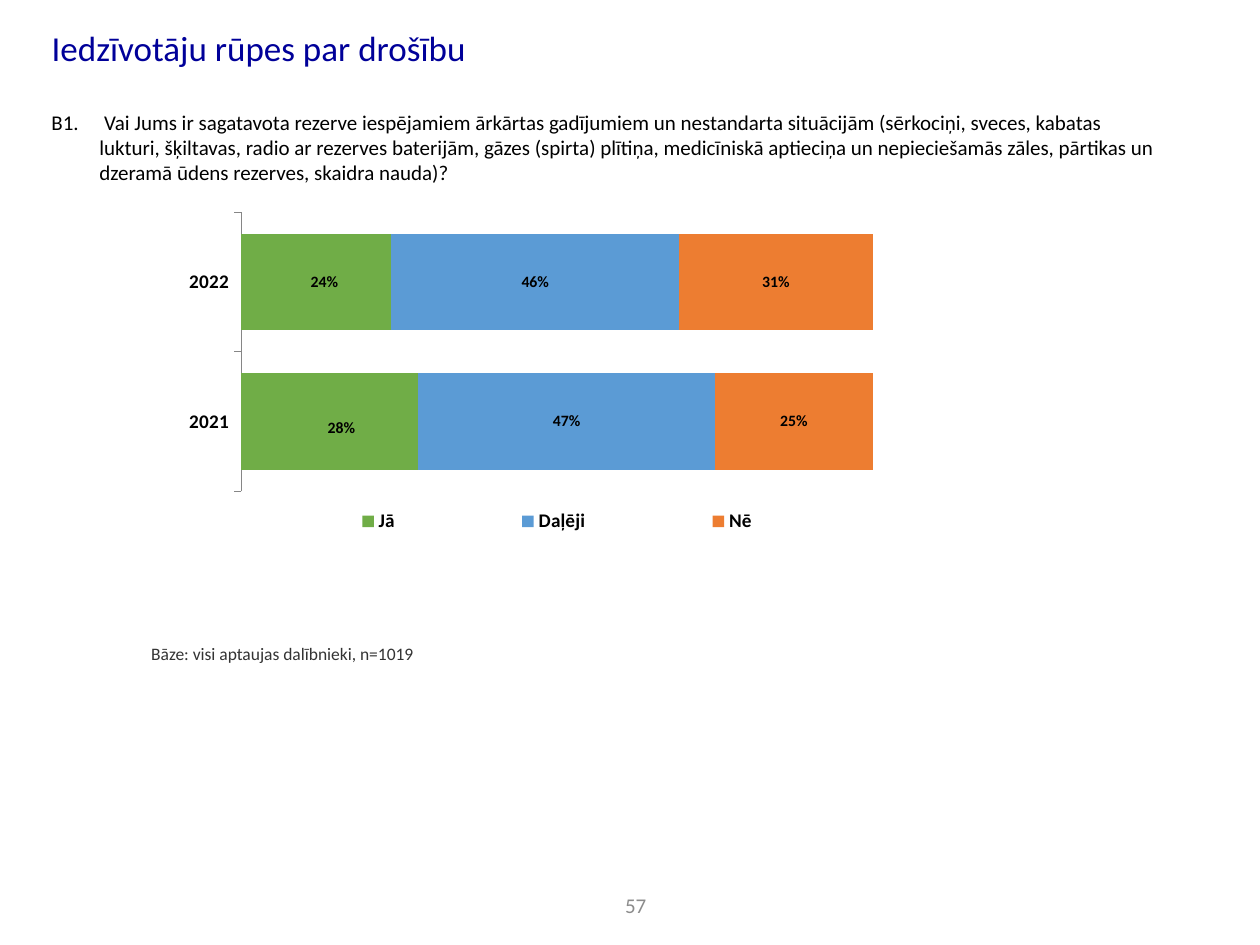
from lxml import etree
from pptx import Presentation
from pptx import util as u
from pptx.chart.data import CategoryChartData
from pptx.dml.color import RGBColor
from pptx.enum import chart as ch, text as tx
from pptx.oxml.ns import qn

HUES = {
    "title": "000099", "text": "000000", "note": "333333", "page": "8C8C8C",
    "axis": "868686", "yes": "70AD47", "part": "5B9BD5", "no": "ED7D31",
}
COLS, ROWS = 100, 75


def place(node, spot, **parts):
    for old in node.findall(qn("c:layout")):
        node.remove(old)
    layout = etree.Element(qn("c:layout"))
    manual = etree.SubElement(layout, qn("c:manualLayout"))
    for tag, val in parts.items():
        etree.SubElement(manual, qn("c:" + tag)).set("val", str(val))
    node.insert(spot, layout)


class Deck:
    font = "Calibri"

    def __init__(self):
        self.prs = Presentation()
        self.prs.slide_width, self.prs.slide_height = u.Inches(10), u.Inches(7.5)
        self.slide = self.prs.slides.add_slide(self.prs.slide_layouts[5])

    def grid(self, col, row, wide, high):
        dx, dy = self.prs.slide_width / COLS, self.prs.slide_height / ROWS
        return [u.Emu(round(n)) for n in (col * dx, row * dy, wide * dx, high * dy)]

    def style(self, font, size, hue, bold=False):
        font.name, font.size, font.bold = self.font, u.Pt(size), bold
        font.color.rgb = RGBColor.from_string(HUES[hue])

    def fill(self, shape, words, size, hue, align="LEFT", anchor="TOP"):
        frame = shape.text_frame
        frame.text = words
        frame.word_wrap = True
        frame.auto_size = tx.MSO_AUTO_SIZE.NONE
        frame.vertical_anchor = tx.MSO_ANCHOR[anchor]
        para = frame.paragraphs[0]
        para.alignment = tx.PP_ALIGN[align]
        for run in para.runs:
            self.style(run.font, size, hue)
        return frame

    def title(self, box, words):
        shape = self.slide.shapes.title
        shape.left, shape.top, shape.width, shape.height = self.grid(*box)
        self.fill(shape, words, 20, "title")

    def label(self, box, words, size, hue, hang=0, inset=True, **kind):
        shape = self.slide.shapes.add_textbox(*self.grid(*box))
        frame = self.fill(shape, words, size, hue, **kind)
        if hang:
            props = frame.paragraphs[0]._p.get_or_add_pPr()
            props.set("marL", str(u.Inches(hang)))
            props.set("indent", str(-u.Inches(hang)))
        if not inset:
            frame.margin_left = frame.margin_right = 0
            frame.margin_top = frame.margin_bottom = 0

    def bars(self, box, cats, rows, shifts):
        data = CategoryChartData(number_format="0%")
        data.categories = cats
        for name, hue, vals in rows:
            data.add_series(name, vals)
        chart = self.slide.shapes.add_chart(
            ch.XL_CHART_TYPE.BAR_STACKED_100, *self.grid(*box), data).chart
        chart.has_title = False
        self.style(chart.font, 18, "text")

        plot = chart.plots[0]
        plot.gap_width, plot.overlap = 45, 100
        plot.vary_by_categories = False
        for series, (name, hue, vals) in zip(plot.series, rows):
            series.format.fill.solid()
            series.format.fill.fore_color.rgb = RGBColor.from_string(HUES[hue])
            marks = series.data_labels
            marks.show_value = True
            marks.number_format, marks.number_format_is_linked = "0%", False
            self.style(marks.font, 9, "text", True)
        for spot, (dx, dy) in enumerate(shifts):
            mark = plot.series[0].points[spot].data_label
            self.style(mark.font, 9, "text", True)
            place(mark._dLbl, 1, x=dx, y=dy)

        axis = chart.category_axis
        axis.has_major_gridlines = False
        axis.major_tick_mark = ch.XL_TICK_MARK.OUTSIDE
        axis.format.line.color.rgb = RGBColor.from_string(HUES["axis"])
        axis.format.line.width = u.Pt(0.75)
        self.style(axis.tick_labels.font, 11, "text", True)
        scale = chart.value_axis
        scale.visible = scale.has_major_gridlines = False
        scale.minimum_scale, scale.maximum_scale = 0, 1

        chart.has_legend = True
        chart.legend.position = ch.XL_LEGEND_POSITION.RIGHT
        chart.legend.include_in_layout = False
        self.style(chart.legend.font, 11, "text", True)
        span = dict(xMode="edge", yMode="edge", x=0.124)
        place(chart._chartSpace.chart.plotArea, 0,
              layoutTarget="inner", **span, y=0.034, w=0.867, h=0.8)
        place(chart.legend._element, 1, **span, y=0.85, w=0.867, h=0.14)


def main():
    deck = Deck()
    deck.title((3.1, 1.6, 93.7, 4.9), "Iedzīvotāju rūpes par drošību")
    deck.label(
        (3.1, 8.2, 90.2, 7.8),
        "B1. \t Vai Jums ir sagatavota rezerve iespējamiem ārkārtas gadījumiem un "
        "nestandarta situācijām (sērkociņi, sveces, kabatas lukturi, šķiltavas, "
        "radio ar rezerves baterijām, gāzes (spirta) plītiņa, medicīniskā aptieciņa "
        "un nepieciešamās zāles, pārtikas un dzeramā ūdens rezerves, skaidra nauda)?",
        12, "text", hang=0.38)
    deck.label((12, 50.3, 31.5, 2.4), "Bāze: visi aptaujas dalībnieki, n=1019",
               10, "note", inset=False, anchor="BOTTOM")
    deck.bars((12, 15.9, 57.8, 27.7), ["2021", "2022"], [
        ("Jā", "yes", (0.28, 0.24)),
        ("Daļēji", "part", (0.47, 0.46)),
        ("Nē", "no", (0.25, 0.31)),
    ], [(0.016, 0.02), (0.011, 0)])
    deck.label((47.7, 70.4, 5.5, 2.8), "57", 12, "page",
               align="CENTER", anchor="MIDDLE")
    deck.prs.save("out.pptx")


if __name__ == "__main__":
    main()
